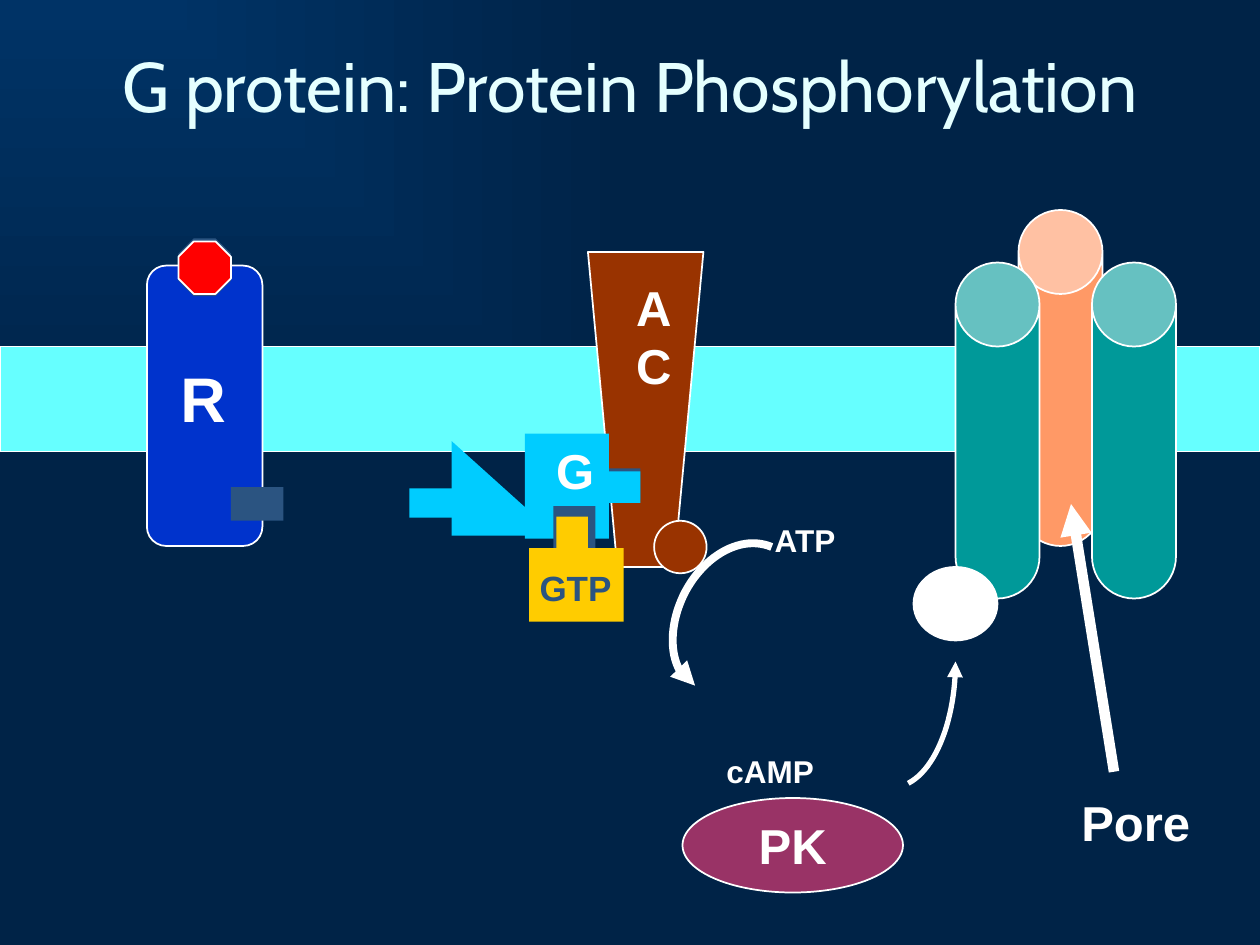
from typing import NamedTuple, Optional

from lxml.etree import SubElement
from pptx import Presentation
from pptx.dml.color import RGBColor
from pptx.enum.shapes import MSO_CONNECTOR, MSO_SHAPE
from pptx.enum.text import MSO_ANCHOR, MSO_AUTO_SIZE, PP_ALIGN
from pptx.oxml import parse_xml
from pptx.oxml.ns import nsdecls, qn
from pptx.util import Inches, Pt

COLUMNS, ROWS = 120, 90
CELL = Inches(10) / COLUMNS

WHITE = RGBColor(0xFF, 0xFF, 0xFF)
TITLE = RGBColor(0xE5, 0xFF, 0xFF)
MEMBRANE = RGBColor(0x66, 0xFF, 0xFF)
ORANGE = RGBColor(0xFF, 0x99, 0x66)
TEAL = RGBColor(0x00, 0x99, 0x99)
BLUE = RGBColor(0x00, 0x33, 0xCC)
SLATE = RGBColor(0x2B, 0x54, 0x81)
RED = RGBColor(0xFF, 0x00, 0x00)
BROWN = RGBColor(0x99, 0x33, 0x00)
PLUM = RGBColor(0x99, 0x33, 0x66)
SKY = RGBColor(0x00, 0xCC, 0xFF)
YELLOW = RGBColor(0xFF, 0xCC, 0x00)
BACKGROUND_LIGHT = RGBColor(0x00, 0x33, 0x66)
BACKGROUND_DARK = RGBColor(0x00, 0x23, 0x47)

Point = tuple[float, float]


class Area(NamedTuple):
    """Left, top, width and height in grid cells."""
    left: float
    top: float
    width: float
    height: float


class Part(NamedTuple):
    kind: MSO_SHAPE
    area: Area
    fill: RGBColor
    outlined: bool = False
    adjustment: Optional[float] = None


class Label(NamedTuple):
    text: str
    area: Area
    size: int
    color: RGBColor = WHITE


def cells(count: float) -> int:
    return round(count * CELL)


def paint_background(page) -> None:
    """Fill the page with a gradient spreading from the top left corner."""
    fill = page.background.fill
    fill.gradient()
    for stop, color in zip(fill.gradient_stops, (BACKGROUND_LIGHT, BACKGROUND_DARK)):
        stop.color.rgb = color
    gradient = page.background._cSld.find(".//" + qn("a:gradFill"))
    gradient.replace(gradient.find(qn("a:lin")), parse_xml(
        f'<a:path {nsdecls("a")} path="rect"><a:fillToRect r="100000" b="100000"/></a:path>'))


def style_shape(shape, fill: RGBColor, outlined: bool) -> None:
    shape.shadow.inherit = False
    shape.fill.solid()
    shape.fill.fore_color.rgb = fill
    if outlined:
        shape.line.color.rgb = WHITE
        shape.line.width = Pt(1)
    else:
        shape.line.fill.background()


def draw_part(page, part: Part):
    shape = page.shapes.add_shape(part.kind, *map(cells, part.area))
    style_shape(shape, part.fill, part.outlined)
    if part.adjustment is not None:
        shape.adjustments[0] = part.adjustment
    return shape


def write_text(frame, text: str, size: int, color: RGBColor, font: str = "Arial",
               bold: bool = True, centred: bool = False) -> None:
    frame.text = text
    frame.word_wrap = False
    for paragraph in frame.paragraphs:
        paragraph.alignment = PP_ALIGN.CENTER if centred else PP_ALIGN.LEFT
        for span in paragraph.runs:
            span.font.name = font
            span.font.size = Pt(size)
            span.font.bold = bold
            span.font.color.rgb = color


def draw_label(page, label: Label) -> None:
    box = page.shapes.add_textbox(*map(cells, label.area))
    write_text(box.text_frame, label.text, label.size, label.color)
    box.text_frame.auto_size = MSO_AUTO_SIZE.SHAPE_TO_FIT_TEXT


def draw_outline(page, points: list[Point], closed: bool):
    start, *others = [(cells(x), cells(y)) for x, y in points]
    builder = page.shapes.build_freeform(*start)
    builder.add_line_segments(others, close=closed)
    return builder.convert_to_shape()


def style_arrow(arrow, width: float) -> None:
    arrow.line.color.rgb = WHITE
    arrow.line.width = Pt(width)
    SubElement(arrow.line._get_or_add_ln(), qn("a:tailEnd"), type="triangle")


def bezier(corners: list[Point], steps: int = 24) -> list[Point]:
    """Points along a cubic curve given by its four control points."""
    curve = []
    for step in range(steps + 1):
        t = step / steps
        weights = ((1 - t) ** 3, 3 * t * (1 - t) ** 2, 3 * t * t * (1 - t), t ** 3)
        curve.append(tuple(sum(w * v for w, v in zip(weights, axis))
                           for axis in zip(*corners)))
    return curve


def draw_curved_arrow(page, points: list[Point], width: float) -> None:
    arrow = draw_outline(page, points, closed=False)
    arrow.shadow.inherit = False
    arrow.fill.background()
    style_arrow(arrow, width)


def draw_straight_arrow(page, start: Point, end: Point, width: float) -> None:
    arrow = page.shapes.add_connector(MSO_CONNECTOR.STRAIGHT, *map(cells, start + end))
    style_arrow(arrow, width)
    SubElement(arrow._element.spPr, qn("a:effectLst"))


def channel(left: float, top: float, fill: RGBColor) -> Part:
    return Part(MSO_SHAPE.CAN, Area(left, top, 8, 32), fill, True, 1.0)


def block(left: float, top: float, width: float, height: float, fill: RGBColor) -> Part:
    return Part(MSO_SHAPE.RECTANGLE, Area(left, top, width, height), fill)


MEMBRANE_AND_RECEPTOR = [
    Part(MSO_SHAPE.RECTANGLE, Area(0, 33, COLUMNS, 10), MEMBRANE, True),
    channel(97, 20, ORANGE),
    channel(104, 25, TEAL),
    Part(MSO_SHAPE.ROUNDED_RECTANGLE, Area(14, 25.3, 11, 26.7), BLUE, True, 0.167),
    Part(MSO_SHAPE.OCTAGON, Area(17, 22.7, 5, 5.5), SLATE),
    Label("R", Area(16, 33.7, 6.7, 8.4), 36),
    block(22, 46.4, 5, 3.2, SLATE),
    channel(91, 25, TEAL),
    Part(MSO_SHAPE.OCTAGON, Area(17, 23, 5, 5), RED, True),
]
CYCLASE_OUTLINE = [(56, 24), (58.8, 54), (64.2, 54), (67, 24)]
G_PROTEIN = [
    block(57, 44.6, 4, 3, SLATE),
    Label("A\nC", Area(59.4, 25.8, 5.8, 12.4), 28),
    block(39, 46.5, 5, 2.8, SKY),
    Part(MSO_SHAPE.RIGHT_TRIANGLE, Area(43, 42, 10, 9), SKY),
    block(50, 41.3, 8, 10, SKY),
    block(52.7, 48.2, 4, 5, SLATE),
    Label("G", Area(51.8, 41.4, 6, 6.8), 28),
    block(57, 44.9, 4, 3, SKY),
    block(53, 49.2, 3, 6, YELLOW),
    block(50.4, 52.2, 9, 7, YELLOW),
    Label("GTP", Area(50.2, 53.4, 10, 5.2), 20, SLATE),
    Part(MSO_SHAPE.OVAL, Area(62.3, 49.6, 5, 5), BROWN, True),
    Label("ATP", Area(72.6, 49, 10.4, 6), 18),
    Label("cAMP", Area(68, 71, 13.6, 6), 18),
    Part(MSO_SHAPE.OVAL, Area(87, 54, 8, 7), WHITE, True),
    Label("Pore", Area(101.8, 74.9, 12.8, 6.8), 28),
]
KINASE = Part(MSO_SHAPE.OVAL, Area(65, 76, 21, 9), PLUM, True)
ATP_TO_CAMP = (bezier([(73.5, 52.1), (70.7, 50.9), (67.2, 52.8), (65.3, 56.3)])
               + bezier([(65.3, 56.3), (63.4, 59.9), (63.7, 64), (66.2, 65.3)])[1:])
KINASE_TO_CHANNEL = bezier([(86.5, 74.6), (89.2, 73.2), (91, 68.4), (91, 63)])


def draw_all(page, items: list) -> None:
    for item in items:
        if isinstance(item, Label):
            draw_label(page, item)
        else:
            draw_part(page, item)


def main() -> None:
    deck = Presentation()
    deck.slide_width, deck.slide_height = cells(COLUMNS), cells(ROWS)
    page = deck.slides.add_slide(deck.slide_layouts[6])
    paint_background(page)

    title = page.shapes.add_textbox(*map(cells, Area(0, 1, COLUMNS, 14))).text_frame
    write_text(title, "G protein: Protein Phosphorylation", 40, TITLE, "Cabin", False, True)
    title.word_wrap = True
    title.vertical_anchor = MSO_ANCHOR.MIDDLE

    draw_all(page, MEMBRANE_AND_RECEPTOR)
    style_shape(draw_outline(page, CYCLASE_OUTLINE, closed=True), BROWN, outlined=True)
    kinase = draw_part(page, KINASE)
    write_text(kinase.text_frame, "PK", 28, WHITE, centred=True)
    draw_all(page, G_PROTEIN)
    draw_curved_arrow(page, ATP_TO_CAMP, 4.5)
    draw_straight_arrow(page, (106.1, 73.5), (102, 48), 6)
    draw_curved_arrow(page, KINASE_TO_CHANNEL, 3)
    deck.save("out.pptx")


if __name__ == "__main__":
    main()
